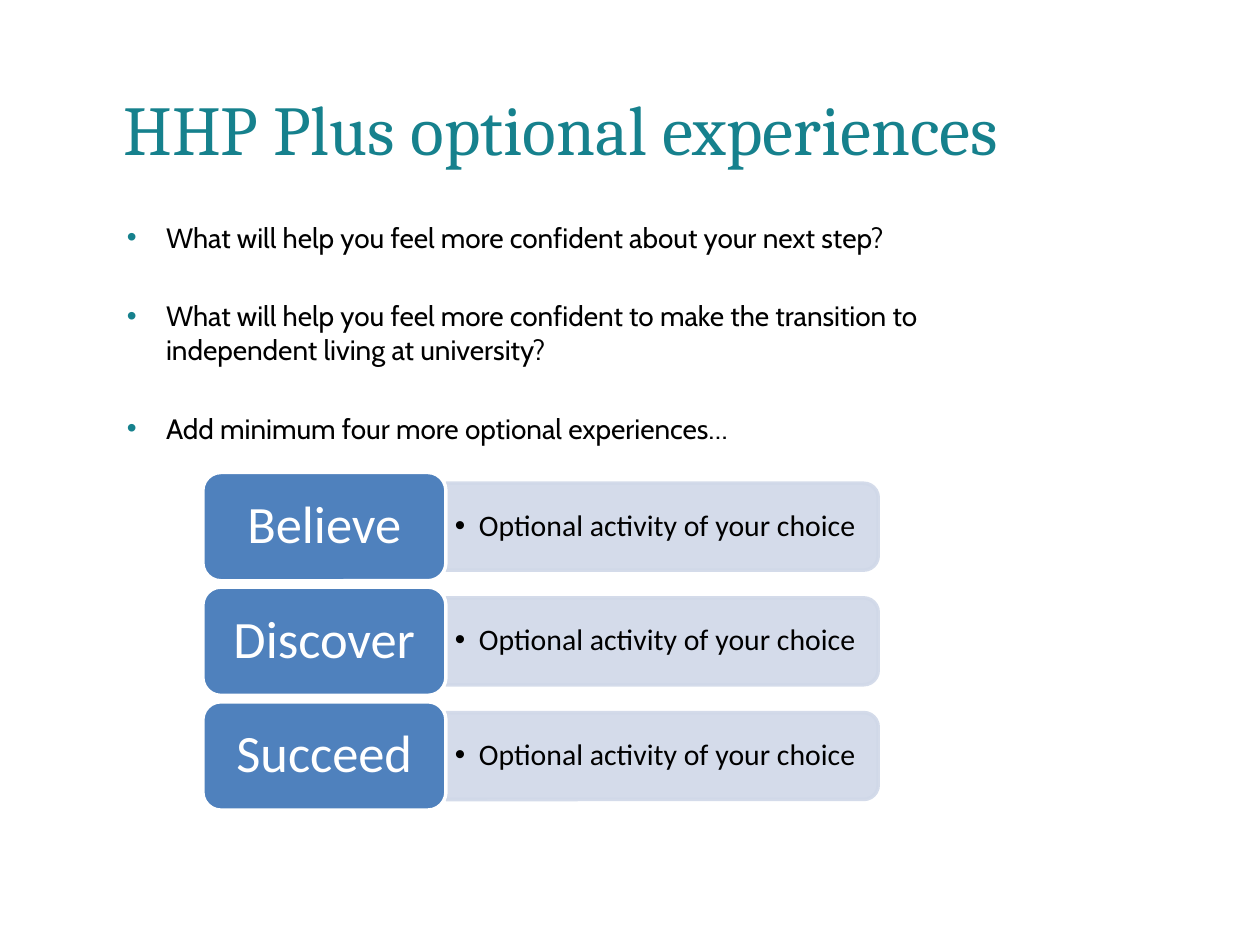
"""Builds the slide on optional experiences: a title, three prompts and three labelled activity rows."""
from lxml import etree
from pptx import Presentation, util as u
from pptx.dml import color
from pptx.enum import shapes, text
from pptx.oxml import ns

deck = Presentation()
deck.slide_width, deck.slide_height = u.Inches(10), u.Inches(7.5)
col, row = deck.slide_width / 100, deck.slide_height / 75
slide = deck.slides.add_slide(deck.slide_layouts[5])


def hue(code):
    return color.RGBColor.from_string(code)


def style(shape, face, size, code, pads, bullet=None):
    frame = shape.text_frame
    frame.word_wrap = True
    frame.auto_size = text.MSO_AUTO_SIZE.NONE
    frame.margin_left = frame.margin_right = int(pads[0] * col)
    frame.margin_top = frame.margin_bottom = int(pads[1] * row)
    for para in frame.paragraphs:
        if bullet:
            indent, tint = bullet
            props = para._p.get_or_add_pPr()
            props.set("marL", str(int(indent * col)))
            props.set("indent", str(-int(indent * col)))
            fill = etree.SubElement(props, ns.qn("a:buClr"))
            etree.SubElement(fill, ns.qn("a:srgbClr"), val=tint)
            etree.SubElement(props, ns.qn("a:buFont"), typeface="Arial")
            etree.SubElement(props, ns.qn("a:buChar"), char="•")
        for run in para.runs:
            run.font.name, run.font.size = face, u.Pt(size)
            run.font.color.rgb = hue(code)
    return frame


def place(left, top, width, height):
    return int(left * col), int(top * row), int(width * col), int(height * row)


title = slide.shapes.title
title.left, title.top, title.width, title.height = place(9.8, 7.6, 84.3, 6.9)
title.text_frame.text = "HHP Plus optional experiences"
frame = style(title, "Cambria", 40, "16818D", (0, 0))
frame.vertical_anchor = text.MSO_ANCHOR.TOP
frame.paragraphs[0].alignment = text.PP_ALIGN.LEFT
frame.paragraphs[0].line_spacing = u.Pt(42)

prompts = slide.shapes.add_textbox(*place(9.1, 17, 72, 48.8))
prompts.text_frame.text = "\n".join([
    "What will help you feel more confident about your next step?",
    "What will help you feel more confident to make the transition to independent living at university?",
    "Add minimum four more optional experiences…",
])
frame = style(prompts, "Cabin", 16, "000000", (1, 0.5), (3.1, "16818D"))
for para in frame.paragraphs[1:]:
    para.space_before = u.Pt(25.7)

left, wide, high, pitch = 16.1, 19.3, 8.6, 9.1
deep, long = 6.9, 34.3
for i, word in enumerate(["Believe", "Discover", "Succeed"]):
    top = 37.5 + i * pitch
    mid = top + high / 2
    edge = left + wide

    panel = slide.shapes.add_shape(
        shapes.MSO_SHAPE.ROUND_2_SAME_RECTANGLE,
        *place(edge + (long - deep) / 2, mid - long / 2, deep, long))
    panel.rotation = 90
    label = slide.shapes.add_shape(
        shapes.MSO_SHAPE.ROUNDED_RECTANGLE, *place(left, top, wide, high))
    for shape, inner, outer in (panel, "D0D8E8", "D0D8E8"), (label, "4F81BD", "FFFFFF"):
        shape.shadow.inherit = False
        shape.fill.solid()
        shape.fill.fore_color.rgb = hue(inner)
        shape.line.color.rgb = hue(outer)
        shape.line.width = u.Pt(2)
    for tone in panel._element.spPr.iter(ns.qn("a:srgbClr")):
        etree.SubElement(tone, ns.qn("a:alpha"), val="90000")

    label.text_frame.text = word
    frame = style(label, "Calibri", 30, "FFFFFF", (1.7, 1))
    frame.paragraphs[0].alignment = text.PP_ALIGN.CENTER

    note = slide.shapes.add_textbox(*place(edge, mid - 3.1, 33.9, 6.2))
    note.text_frame.text = "Optional activity of your choice"
    style(note, "Calibri", 17, "000000", (0.7, 0.4), (1.9, "000000"))
    for shape in label, note:
        shape.text_frame.vertical_anchor = text.MSO_ANCHOR.MIDDLE
        shape.text_frame.paragraphs[0].line_spacing = 0.9

deck.save("out.pptx")
